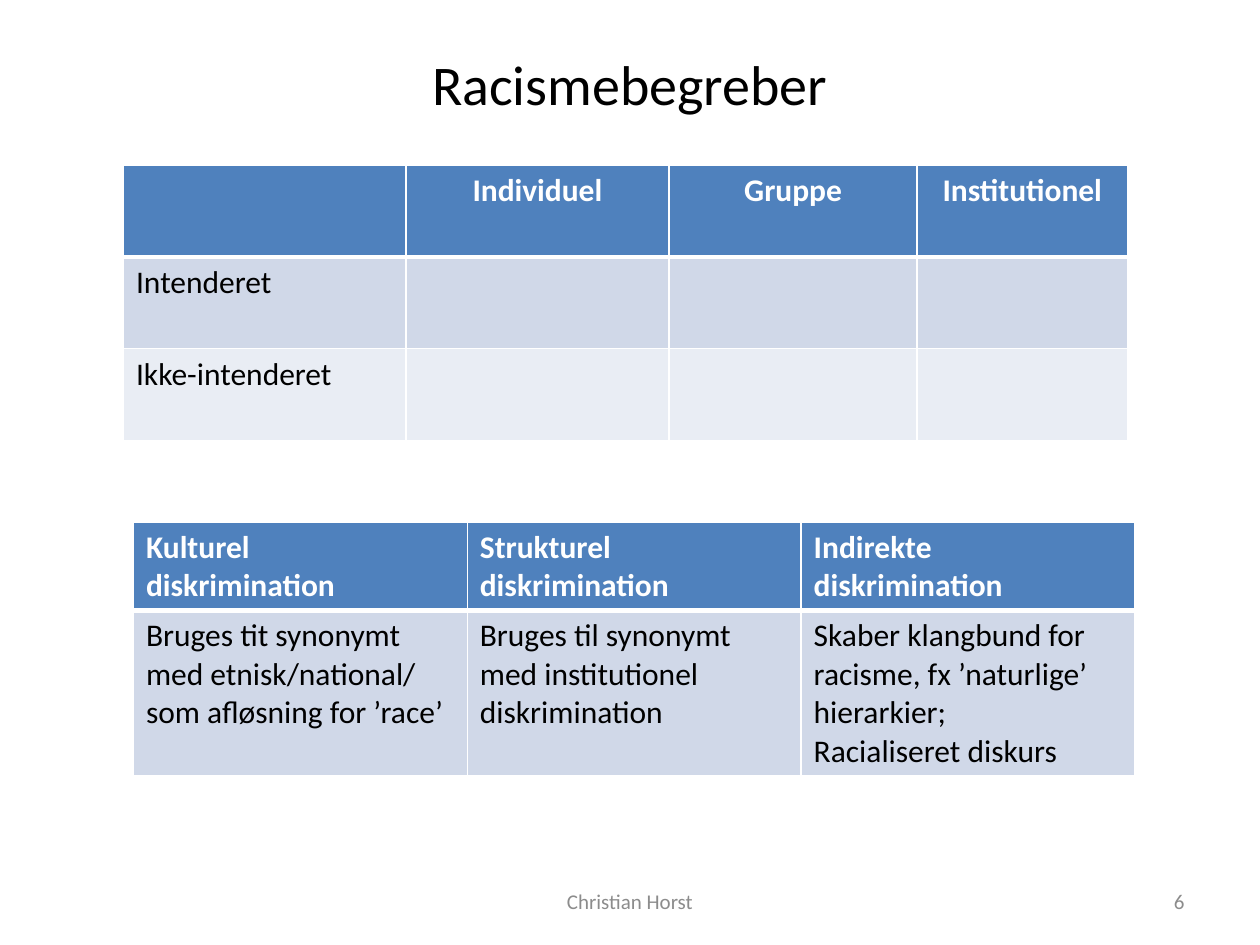
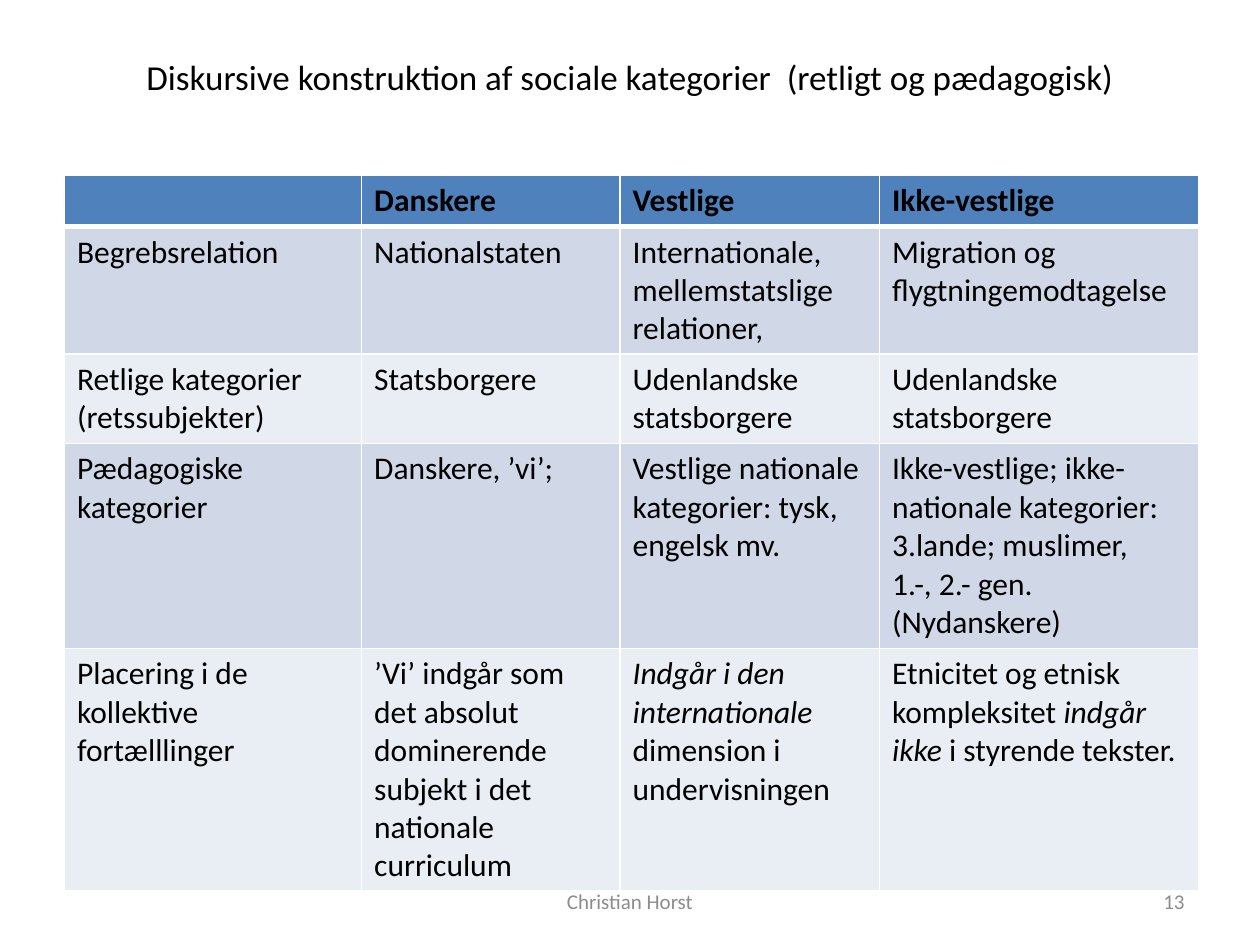
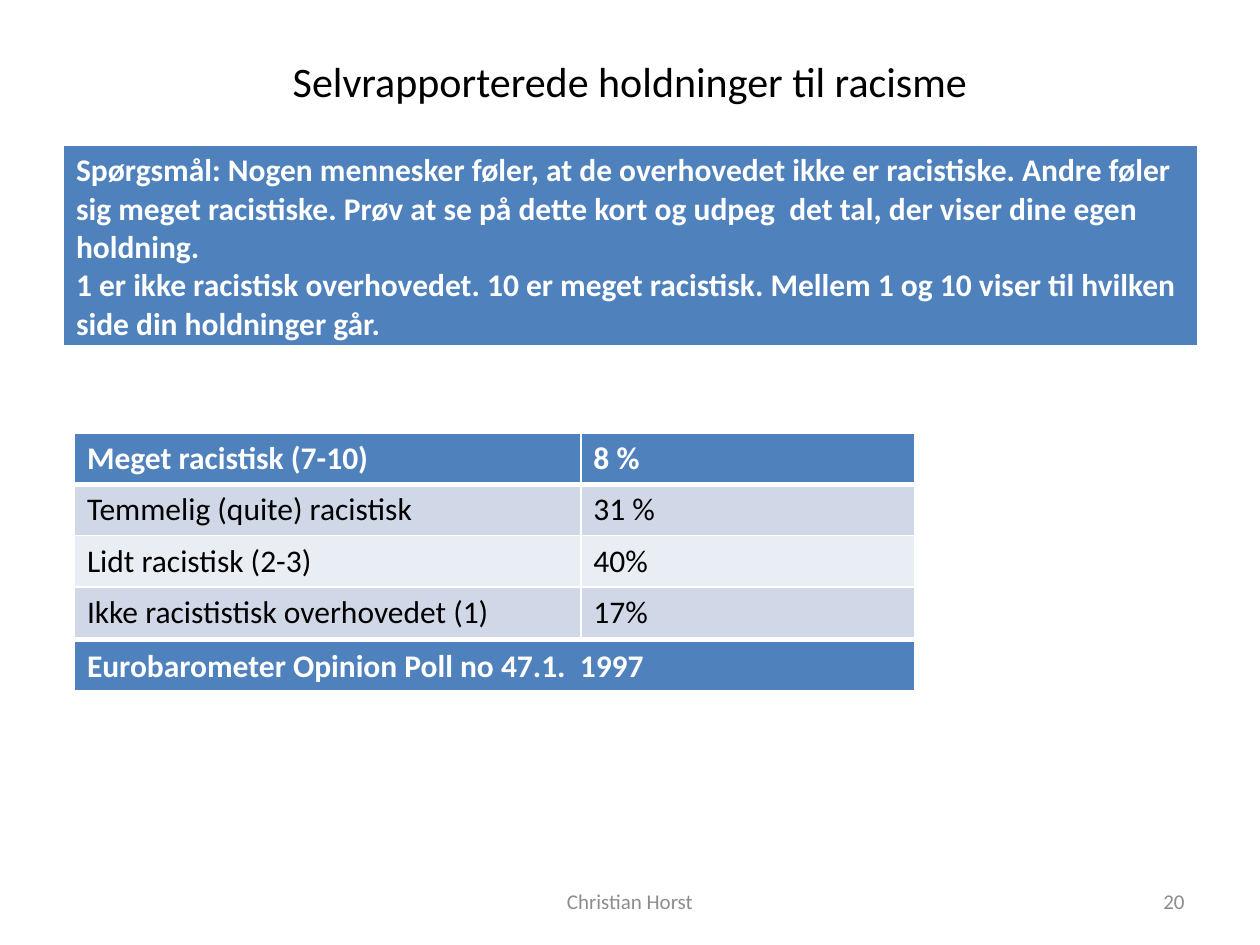
from lxml.etree import SubElement
from pptx import Presentation
from pptx.dml.color import RGBColor
from pptx.enum.text import MSO_ANCHOR, PP_ALIGN
from pptx.oxml.ns import qn
from pptx.util import Cm, Pt

WHITE = RGBColor(0xFF, 0xFF, 0xFF)
BLACK = RGBColor(0x00, 0x00, 0x00)
GREY = RGBColor(0x8C, 0x8C, 0x8C)
HEADER_BLUE = RGBColor(0x4F, 0x81, 0xBD)
BANDS = (RGBColor(0xD0, 0xD8, 0xE8), RGBColor(0xE9, 0xED, 0xF4))
FONT = "Calibri"
BODY_SIZE = 18
AUTHOR = "Christian Horst"
THIN, THICK = Pt(1), Pt(3)
LINE = 1.03  # height in cm of a row with one line of text

# In texts, *...* is italic, \n starts a paragraph and \v breaks a line.
# Lengths are in cm; the first row of every table is its header.
SLIDES = [
    {
        "title": "Racismebegreber", "size": 32, "title_height": 1.83, "number": 6,
        "tables": [
            {
                "at": (2.49, 3.33), "columns": (5.69, 5.31, 5.0, 4.24),
                "heights": (1.85, 1.85, 1.85), "header_align": PP_ALIGN.CENTER,
                "rows": [
                    ("", "Individuel", "Gruppe", "Institutionel"),
                    ("Intenderet", "", "", ""),
                    ("Ikke-intenderet", "", "", ""),
                ],
            },
            {
                "at": (2.69, 10.52), "columns": (6.73, 6.73, 6.73),
                "heights": (1.79, 3.33),
                "rows": [
                    ("Kulturel\ndiskrimination", "Strukturel diskrimination",
                     "Indirekte  diskrimination"),
                    ("Bruges tit synonymt med etnisk/national/ som afløsning for ’race’",
                     "Bruges til synonymt med institutionel diskrimination",
                     "Skaber klangbund for racisme, fx ’naturlige’ hierarkier;\n"
                     "Racialiseret diskurs"),
                ],
            },
        ],
    },
    {
        "title": "Diskursive konstruktion af sociale kategorier  (retligt og pædagogisk)",
        "size": 20, "title_height": 1.55, "number": 13,
        "tables": [
            {
                "at": (1.3, 3.54), "columns": (5.99, 5.21, 5.23, 6.43),
                "heights": (LINE, 2.57, 1.8, 4.13, 4.88), "header_color": BLACK,
                "rows": [
                    ("", "Danskere", "Vestlige", "Ikke-vestlige"),
                    ("Begrebsrelation", "Nationalstaten",
                     "Internationale, mellemstatslige relationer,",
                     "Migration og flygtningemodtagelse"),
                    ("Retlige kategorier\n(retssubjekter)", "Statsborgere",
                     "Udenlandske statsborgere", "Udenlandske statsborgere"),
                    ("Pædagogiske kategorier", "Danskere, ’vi’;",
                     "Vestlige nationale kategorier: tysk, engelsk mv.",
                     "Ikke-vestlige; ikke-nationale kategorier:\n"
                     "3.lande; muslimer, \v1.-, 2.- gen. (Nydanskere)"),
                    ("Placering i de kollektive fortælllinger",
                     "’Vi’ indgår som det absolut dominerende subjekt i det "
                     "nationale curriculum",
                     "*Indgår i den internationale* dimension i undervisningen",
                     "Etnicitet og etnisk kompleksitet *indgår ikke* i styrende tekster."),
                ],
            },
        ],
    },
    {
        "title": "Selvrapporterede holdninger til racisme",
        "size": 24, "title_height": 1.75, "number": 20,
        "tables": [
            {
                "at": (1.28, 2.93), "columns": (22.86,), "heights": (4.07,),
                "rows": [
                    ("Spørgsmål: Nogen mennesker føler, at de overhovedet ikke er "
                     "racistiske. Andre føler sig meget racistiske. Prøv at se på dette "
                     "kort og udpeg  det tal, der viser dine egen holdning.\v"
                     "1 er ikke racistisk overhovedet. 10 er meget racistisk. Mellem 1 "
                     "og 10 viser til hvilken side din holdninger går.",),
                ],
            },
            {
                "at": (1.5, 8.74), "columns": (10.21, 6.73), "heights": (LINE,) * 4,
                "rows": [
                    ("Meget racistisk (7-10)", "8 %"),
                    ("Temmelig (quite) racistisk", "31 %"),
                    ("Lidt racistisk (2-3)", "40%"),
                    ("Ikke racististisk overhovedet (1)", "17%"),
                ],
            },
            {
                "at": (1.5, 12.93), "columns": (16.94,), "heights": (LINE,),
                "rows": [("Eurobarometer Opinion Poll no 47.1.  1997",)],
            },
        ],
    },
]


def set_font(paragraph, size, color, bold=False):
    font = paragraph.font
    font.name, font.size, font.bold = FONT, Pt(size), bold
    font.color.rgb = color


def add_label(slide, text, box, size, color, align):
    label = slide.shapes.add_textbox(*map(Cm, box)).text_frame
    label.word_wrap = True
    label.vertical_anchor = MSO_ANCHOR.MIDDLE
    paragraph = label.paragraphs[0]
    paragraph.text, paragraph.alignment = text, align
    set_font(paragraph, size, color)


def write_marked(paragraph, text):
    """Add runs, with text between asterisks in italics and \\v as line break."""
    for part_index, part in enumerate(text.split("*")):
        for line_index, line in enumerate(part.split("\v")):
            if line_index:
                paragraph.add_line_break()
            if line:
                run = paragraph.add_run()
                run.text = line
                if part_index % 2:
                    run.font.italic = True


def set_borders(cell, top, bottom):
    properties = cell._tc.get_or_add_tcPr()
    for side, width in (("L", THIN), ("R", THIN), ("T", top), ("B", bottom)):
        border = SubElement(properties, qn(f"a:ln{side}"), w=str(width))
        fill = SubElement(border, qn("a:solidFill"))
        SubElement(fill, qn("a:srgbClr"), val=str(WHITE))


def fill_cell(cell, text, row, header_color, header_align):
    is_header = row == 0
    set_borders(cell, THICK if row == 1 else THIN, THICK if is_header else THIN)
    cell.fill.solid()
    cell.fill.fore_color.rgb = HEADER_BLUE if is_header else BANDS[(row - 1) % 2]
    for index, line in enumerate(text.split("\n")):
        frame = cell.text_frame
        paragraph = frame.add_paragraph() if index else frame.paragraphs[0]
        set_font(paragraph, BODY_SIZE, header_color if is_header else BLACK, is_header)
        if is_header:
            paragraph.alignment = header_align
        write_marked(paragraph, line)


def add_banded_table(slide, at, columns, heights, rows,
                     header_color=WHITE, header_align=PP_ALIGN.LEFT):
    table = slide.shapes.add_table(
        len(rows), len(columns), *map(Cm, (*at, sum(columns), sum(heights)))).table
    for column, width in zip(table.columns, columns):
        column.width = Cm(width)
    for row, (height, texts) in enumerate(zip(heights, rows)):
        table.rows[row].height = Cm(height)
        for column, text in enumerate(texts):
            fill_cell(table.cell(row, column), text, row, header_color, header_align)


def main():
    presentation = Presentation()
    presentation.slide_width, presentation.slide_height = Cm(25.4), Cm(19.05)
    for content in SLIDES:
        slide = presentation.slides.add_slide(presentation.slide_layouts[6])
        add_label(slide, content["title"], (1.27, 0.76, 22.86, content["title_height"]),
                  content["size"], BLACK, PP_ALIGN.CENTER)
        for table in content["tables"]:
            add_banded_table(slide, **table)
        add_label(slide, str(content["number"]), (18.2, 17.66, 5.93, 1.01),
                  12, GREY, PP_ALIGN.RIGHT)
        add_label(slide, AUTHOR, (8.68, 17.66, 8.04, 1.01), 12, GREY, PP_ALIGN.CENTER)
    presentation.save("out.pptx")


if __name__ == "__main__":
    main()
